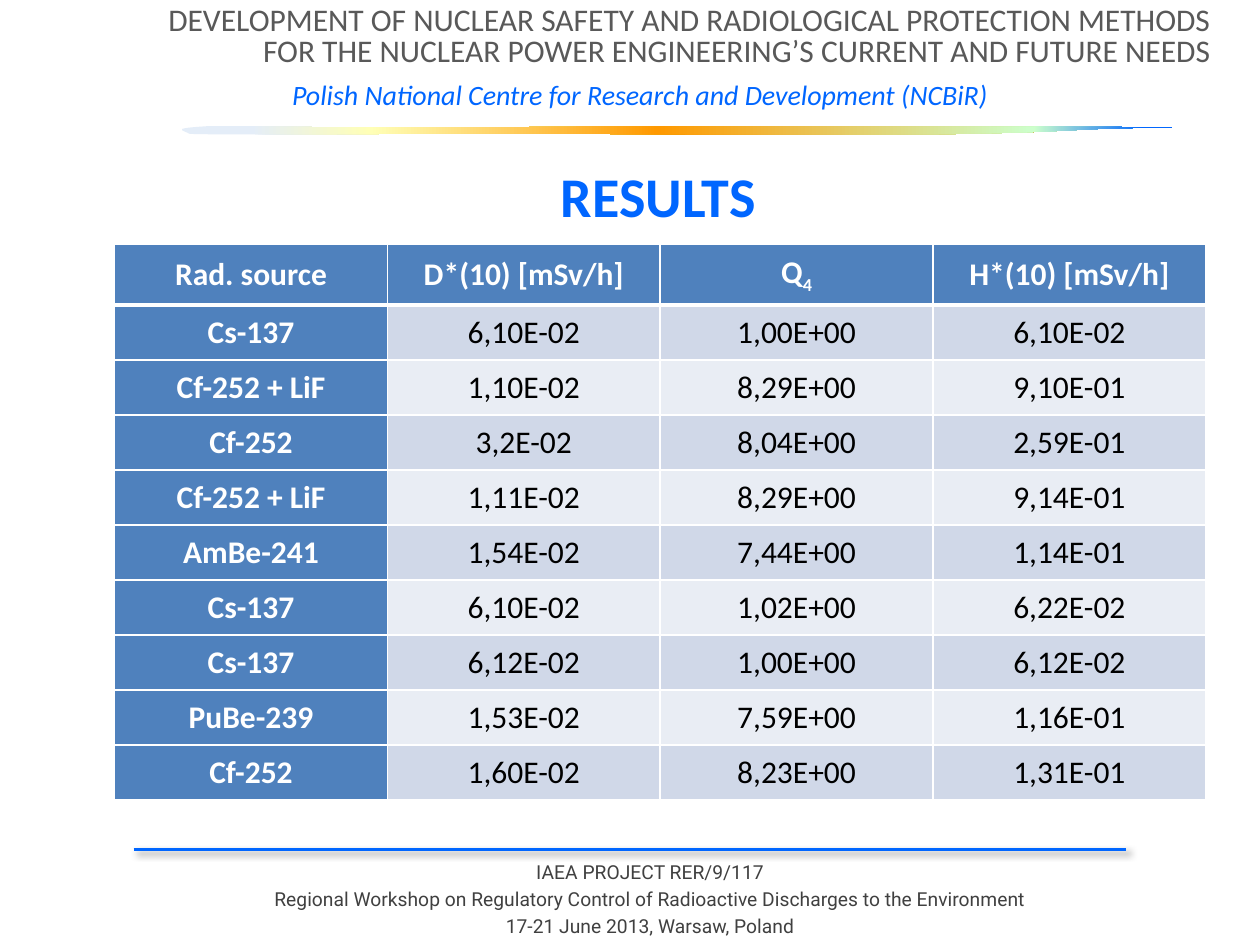
from lxml import etree
from pptx import Presentation
from pptx.dml.color import RGBColor
from pptx.enum.shapes import MSO_CONNECTOR
from pptx.enum.text import MSO_ANCHOR, MSO_AUTO_SIZE, PP_ALIGN
from pptx.oxml import parse_xml
from pptx.oxml.ns import nsdecls, qn
from pptx.util import Inches, Pt

LEFT, CENTER, RIGHT = PP_ALIGN.LEFT, PP_ALIGN.CENTER, PP_ALIGN.RIGHT
TOP, MIDDLE = MSO_ANCHOR.TOP, MSO_ANCHOR.MIDDLE

BLUE = RGBColor(0x00, 0x66, 0xFF)
GRAY = RGBColor(0x59, 0x59, 0x59)
DARK = RGBColor(0x40, 0x40, 0x40)
WHITE = RGBColor(0xFF, 0xFF, 0xFF)
BLACK = RGBColor(0x00, 0x00, 0x00)
HEAD = RGBColor(0x4F, 0x81, 0xBD)
BANDS = RGBColor(0xD0, 0xD8, 0xE8), RGBColor(0xE9, 0xED, 0xF4)

TITLE = "RESULTS"
PROJECT = ("DEVELOPMENT OF NUCLEAR SAFETY AND RADIOLOGICAL PROTECTION METHODS\v"
           "FOR THE NUCLEAR POWER ENGINEERING’S CURRENT AND FUTURE NEEDS")
FUNDER = "Polish National Centre for Research and Development (NCBiR)"
EVENT = [
    "IAEA PROJECT RER/9/117",
    "Regional Workshop on Regulatory Control of Radioactive Discharges to the Environment",
    "17-21 June 2013, Warsaw, Poland",
]
ROWS = [
    ("Rad. source", "D*(10) [mSv/h]", "Q4", "H*(10) [mSv/h]"),
    ("Cs-137", "6,10E-02", "1,00E+00", "6,10E-02"),
    ("Cf-252 + LiF", "1,10E-02", "8,29E+00", "9,10E-01"),
    ("Cf-252", "3,2E-02", "8,04E+00", "2,59E-01"),
    ("Cf-252 + LiF", "1,11E-02", "8,29E+00", "9,14E-01"),
    ("AmBe-241", "1,54E-02", "7,44E+00", "1,14E-01"),
    ("Cs-137", "6,10E-02", "1,02E+00", "6,22E-02"),
    ("Cs-137", "6,12E-02", "1,00E+00", "6,12E-02"),
    ("PuBe-239", "1,53E-02", "7,59E+00", "1,16E-01"),
    ("Cf-252", "1,60E-02", "8,23E+00", "1,31E-01"),
]
GRID = (0.91, 1.94, 8.66, 4.41)
TALL = 0.48

# Gradient stops: position (percent) and colour
RAINBOW = [(7, "E4EDF8"), (19, "FFFFB7"), (48, "FF9900"),
           (86, "CCFFCC"), (97, "0066FF")]

# Brush stroke: a start point, then curves of two controls and an end
START = (8.82, 1.02)
CURVES = [
    ((9.18, 1.01), (9.49, 1.01), (9.18, 1.01)),
    ((7.94, 1.00), (5.18, 1.00), (3.92, 1.01)),
    ((3.92, 1.01), (2.68, 1.01), (2.68, 1.01)),
    ((2.33, 1.01), (1.85, 0.99), (1.67, 1.00)),
    ((1.34, 1.02), (1.45, 1.03), (1.50, 1.06)),
    ((1.44, 1.07), (2.46, 1.07), (3.39, 1.06)),
    ((4.31, 1.06), (6.31, 1.07), (7.06, 1.07)),
    ((8.29, 1.06), (8.47, 1.03), (8.82, 1.02)),
]
STEPS = 12


def style(para, font, size, color, bold=False, italic=False, align=CENTER):
    para.alignment = align
    for run in para.runs:
        run.font.name, run.font.size = font, Pt(size)
        run.font.bold, run.font.italic = bold, italic
        run.font.color.rgb = color


def add_text(slide, box, lines):
    frame = slide.shapes.add_textbox(*map(Inches, box)).text_frame
    frame.word_wrap = True
    frame.vertical_anchor = TOP
    frame.text = "\n".join(lines)
    return frame


def shade(shape, stops):
    """Give the shape a left-to-right gradient, no outline and no shadow."""
    shape.shadow.inherit = False
    shape.line.fill.background()
    shape.fill.background()
    marks = "".join(
        f'<a:gs pos="{pos * 1000}"><a:srgbClr val="{color}"/></a:gs>'
        for pos, color in stops)
    grad = parse_xml(f'<a:gradFill {nsdecls("a")} rotWithShape="1">'
                     f'<a:gsLst>{marks}</a:gsLst>'
                     '<a:lin ang="0" scaled="0"/></a:gradFill>')
    props = shape._element.spPr
    props.replace(props.find(qn("a:noFill")), grad)


def bezier(p, q, r, s):
    for i in range(1, STEPS + 1):
        t = i / STEPS
        u = 1 - t
        yield tuple(Inches(u**3 * a + 3*u*u*t * b + 3*u*t*t * c + t**3 * d)
                    for a, b, c, d in zip(p, q, r, s))


def add_brush(slide):
    pen = slide.shapes.build_freeform(*map(Inches, START), scale=1.0)
    here = START
    for curve in CURVES:
        pen.add_line_segments(bezier(here, *curve), close=False)
        here = curve[-1]
    pen.add_line_segments([], close=True)
    shade(pen.convert_to_shape(), RAINBOW)


def add_rule(slide):
    rule = slide.shapes.add_connector(
        MSO_CONNECTOR.STRAIGHT, *map(Inches, (1.06, 6.74, 8.94, 6.74)))
    rule.line.color.rgb, rule.line.width = BLUE, Pt(1.5)
    rule._element.spPr.append(parse_xml(
        f'<a:effectLst {nsdecls("a")}><a:outerShdw blurRad="{Pt(4)}" '
        f'dist="{Pt(3)}" dir="2700000" rotWithShape="0"><a:srgbClr val="000000">'
        '<a:alpha val="40000"/></a:srgbClr></a:outerShdw></a:effectLst>'))


def edge(cell, base):
    """Draw white cell borders, with the bottom one of the given width."""
    props = cell._tc.get_or_add_tcPr()
    for spot, (side, width) in enumerate(zip("LRTB", (1, 1, 1, base))):
        line = etree.Element(qn("a:ln" + side), w=str(Pt(width)))
        fill = etree.SubElement(line, qn("a:solidFill"))
        etree.SubElement(fill, qn("a:srgbClr"), val=str(WHITE))
        props.insert(spot, line)


def add_results(slide):
    table = slide.shapes.add_table(
        len(ROWS), len(ROWS[0]), *map(Inches, GRID)).table
    wide, high = GRID[2:]
    short = (high - TALL) / (len(ROWS) - 1)
    for col in table.columns:
        col.width = Inches(wide / len(ROWS[0]))
    for i, row in enumerate(ROWS):
        table.rows[i].height = Inches(short if i else TALL)
        for j, text in enumerate(row):
            key = i == 0 or j == 0
            cell = table.cell(i, j)
            cell.margin_left = cell.margin_right = Inches(0.07)
            cell.margin_top = cell.margin_bottom = 0
            cell.vertical_anchor = MIDDLE
            cell.fill.solid()
            cell.fill.fore_color.rgb = HEAD if key else BANDS[(i - 1) % 2]
            edge(cell, 1 if i else 3)
            para = cell.text_frame.paragraphs[0]
            para.text = text
            if text == "Q4":
                para.text = "Q"
                sub = para.add_run()
                sub.text = "4"
                sub.font._element.set("baseline", "-25000")
            style(para, "Calibri", 18, WHITE if key else BLACK, bold=key)


def main():
    deck = Presentation()
    deck.slide_width, deck.slide_height = Inches(10), Inches(7.5)
    slide = deck.slides.add_slide(deck.slide_layouts[5])

    add_rule(slide)
    add_brush(slide)
    event = add_text(slide, (1.34, 6.78, 7.64, 0.67), EVENT)
    for i, para in enumerate(event.paragraphs):
        style(para, "Roboto", 11, DARK)
        para.space_before = Pt(2.2 if i else 0)

    header = add_text(slide, (1.22, 0, 8.58, 0.94), [PROJECT, FUNDER])
    header.margin_right = Inches(0.19)
    project, funder = header.paragraphs
    style(project, "Calibri", 18, GRAY, align=RIGHT)
    style(funder, "Calibri", 16, BLUE, italic=True, align=LEFT)
    funder._p.get_or_add_pPr().set("marL", str(Inches(1)))
    project.line_spacing = funder.line_spacing = Pt(18)
    project.space_after, funder.space_after = Pt(6), Pt(12)

    title = slide.shapes.title
    title.left, title.top, title.width, title.height = map(
        Inches, (1.06, 1.23, 8.33, 0.91))
    title.text_frame.text = TITLE
    title.text_frame.auto_size = MSO_AUTO_SIZE.NONE
    title.text_frame.vertical_anchor = TOP
    style(title.text_frame.paragraphs[0], "Calibri", 32, BLUE, bold=True)

    add_results(slide)
    deck.save("out.pptx")


if __name__ == "__main__":
    main()
